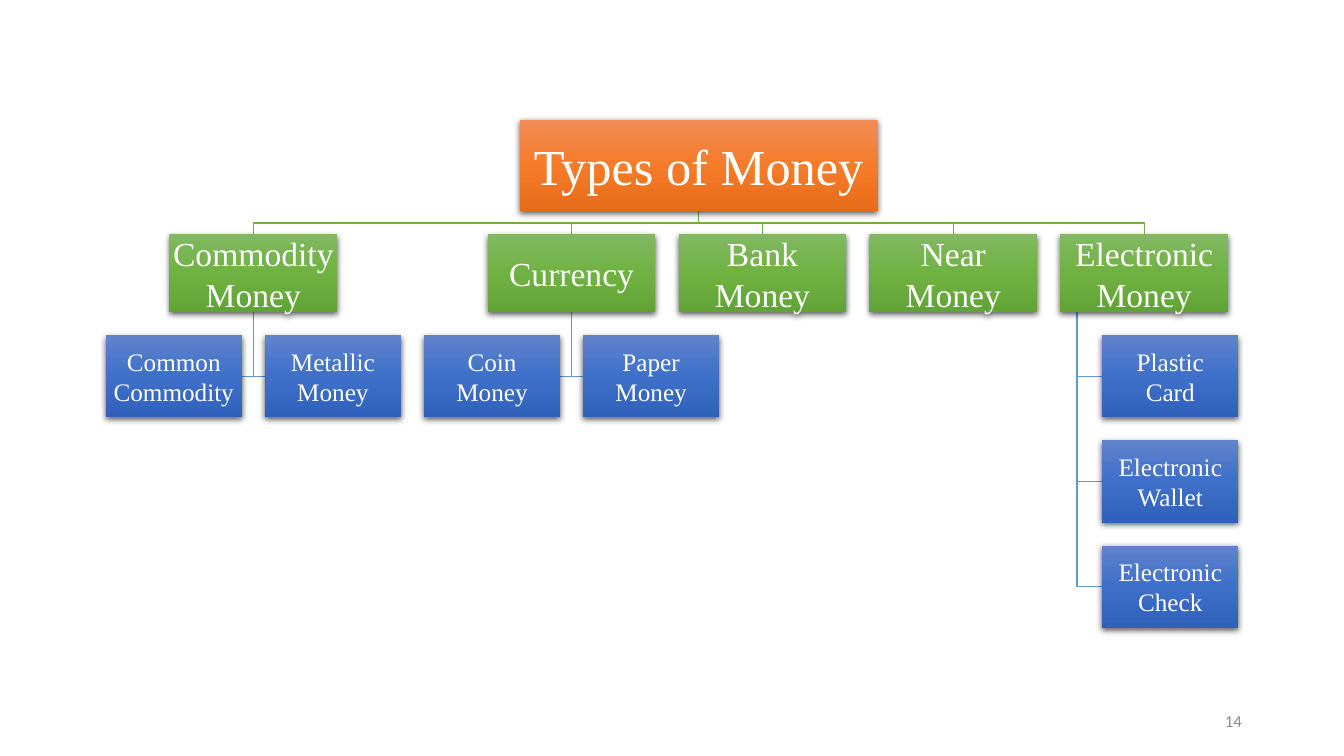
"""Builds a hierarchy slide that sorts money into its types."""
from dataclasses import dataclass

from pptx import Presentation
from pptx import oxml
from pptx.dml.color import RGBColor
from pptx.enum import shapes, text
from pptx.oxml import ns
from pptx.util import Cm, Pt


@dataclass(frozen=True)
class Level:
    width: float
    height: float
    size: int
    inset: float
    gradient: tuple
    line: str = ""


@dataclass(frozen=True)
class Theme:
    root: Level = Level(9.02, 2.31, 36, 0.08, ("F18C57", "F67B28", "E56C19"))
    branch: Level = Level(4.23, 1.96, 24, 0.05, ("81B861", "6FB242", "62A336"), "70AD47")
    leaf: Level = Level(3.43, 2.07, 18, 0.03, ("6183CB", "3E70CA", "3062BB"), "5B9BD5")
    font: str = "Times New Roman"
    text_color: str = "FFFFFF"
    number_font: str = "Calibri"
    number_color: str = "8C8C8C"
    number_size: int = 12


THEME = Theme()
GAP = 0.58
ROOT_TOP = 3.02
BRANCH_TOP = ROOT_TOP + THEME.root.height + GAP
LEAF_TOP = BRANCH_TOP + THEME.branch.height + GAP
FIRST_LEFT = 4.27
BRANCHES = [
    ("Commodity Money", ["Common Commodity", "Metallic Money"]),
    ("Currency", ["Coin\nMoney", "Paper\nMoney"]),
    ("Bank Money", []),
    ("Near\nMoney", []),
    ("Electronic Money", ["Plastic\nCard", "Electronic Wallet", "Electronic Check"]),
]


def write(frame, words, font, size, color, align):
    """Fill a text frame and format all its runs."""
    frame.word_wrap = True
    frame.vertical_anchor = text.MSO_ANCHOR.MIDDLE
    frame.text = words
    for paragraph in frame.paragraphs:
        paragraph.alignment = align
        for run in paragraph.runs:
            run.font.name = font
            run.font.size = Pt(size)
            run.font.color.rgb = RGBColor.from_string(color)


def add_box(slide, level, left, top, words):
    """Add a shaded box with centred words."""
    box = slide.shapes.add_shape(shapes.MSO_SHAPE.RECTANGLE, Cm(left), Cm(top),
                                 Cm(level.width), Cm(level.height))
    stops = "".join(f'<a:gs pos="{i * 50000}"><a:srgbClr val="{color}"/></a:gs>'
                    for i, color in enumerate(level.gradient))
    properties = box._element.spPr
    properties.append(oxml.parse_xml(
        f'<a:gradFill {ns.nsdecls("a")} rotWithShape="1"><a:gsLst>{stops}</a:gsLst>'
        '<a:lin ang="5400000" scaled="0"/></a:gradFill>'))
    box.line.fill.background()
    properties.append(oxml.parse_xml(
        f'<a:effectLst {ns.nsdecls("a")}><a:outerShdw blurRad="57150" dist="19050" '
        'dir="5400000" algn="ctr" rotWithShape="0"><a:srgbClr val="000000">'
        '<a:alpha val="63000"/></a:srgbClr></a:outerShdw></a:effectLst>'))
    frame = box.text_frame
    frame.margin_left = frame.margin_right = Cm(level.inset)
    frame.margin_top = frame.margin_bottom = Cm(level.inset)
    write(frame, words, THEME.font, level.size, THEME.text_color, text.PP_ALIGN.CENTER)


def add_elbow(slide, color, points):
    """Add an open angled line through points."""
    start, *rest = [(Cm(x), Cm(y)) for x, y in points]
    builder = slide.shapes.build_freeform(*start)
    builder.add_line_segments(rest, close=False)
    elbow = builder.convert_to_shape()
    elbow.fill.background()
    elbow.line.color.rgb = RGBColor.from_string(color)
    elbow.line.width = Pt(1)
    elbow.shadow.inherit = False


def branch_lefts():
    """Return the left edges, leaving room for side-by-side leaves."""
    lefts, left = [], FIRST_LEFT
    for index in range(len(BRANCHES)):
        lefts.append(left)
        left += 2 * (THEME.leaf.width + GAP) if index == 0 else THEME.branch.width + GAP
    return lefts


def leaf_places(left, count):
    """Return trunk x, then left, joining edge and top of each leaf."""
    branch, leaf = THEME.branch, THEME.leaf
    if count == 2:
        middle = left + branch.width / 2
        before, after = middle - GAP / 2, middle + GAP / 2
        return middle, [(before - leaf.width, before, LEAF_TOP), (after, after, LEAF_TOP)]
    edge = left + branch.width / 4
    return left + branch.width / 10, [
        (edge, edge, LEAF_TOP + i * (leaf.height + GAP)) for i in range(count)]


def add_tree(slide):
    """Draw the links of the hierarchy, then its boxes."""
    root, branch, leaf = THEME.root, THEME.branch, THEME.leaf
    lefts = branch_lefts()
    root_middle = (lefts[0] + lefts[-1] + branch.width) / 2
    root_bottom = ROOT_TOP + root.height
    boxes = [(root, root_middle - root.width / 2, ROOT_TOP, "Types of Money")]
    for left, (branch_name, leaves) in zip(lefts, BRANCHES):
        middle, rail = left + branch.width / 2, root_bottom + GAP / 2
        add_elbow(slide, branch.line, [(root_middle, root_bottom), (root_middle, rail),
                                       (middle, rail), (middle, BRANCH_TOP)])
        boxes.append((branch, left, BRANCH_TOP, branch_name))
        trunk, places = leaf_places(left, len(leaves))
        for leaf_name, (leaf_left, edge, top) in zip(leaves, places):
            joint = top + leaf.height / 2
            add_elbow(slide, leaf.line, [(trunk, BRANCH_TOP + branch.height),
                                         (trunk, joint), (edge, joint)])
            boxes.append((leaf, leaf_left, top, leaf_name))
    for box in boxes:
        add_box(slide, *box)


def add_page_number(slide, number):
    """Add the page number at the lower right."""
    page = slide.shapes.add_textbox(Cm(23.93), Cm(17.65), Cm(7.62), Cm(1.02))
    write(page.text_frame, number, THEME.number_font, THEME.number_size,
          THEME.number_color, text.PP_ALIGN.RIGHT)


def main():
    """Build and save the slide."""
    deck = Presentation()
    deck.slide_width, deck.slide_height = Cm(33.87), Cm(19.05)
    slide = deck.slides.add_slide(deck.slide_layouts[6])
    add_page_number(slide, "14")
    add_tree(slide)
    deck.save("out.pptx")


if __name__ == "__main__":
    main()
